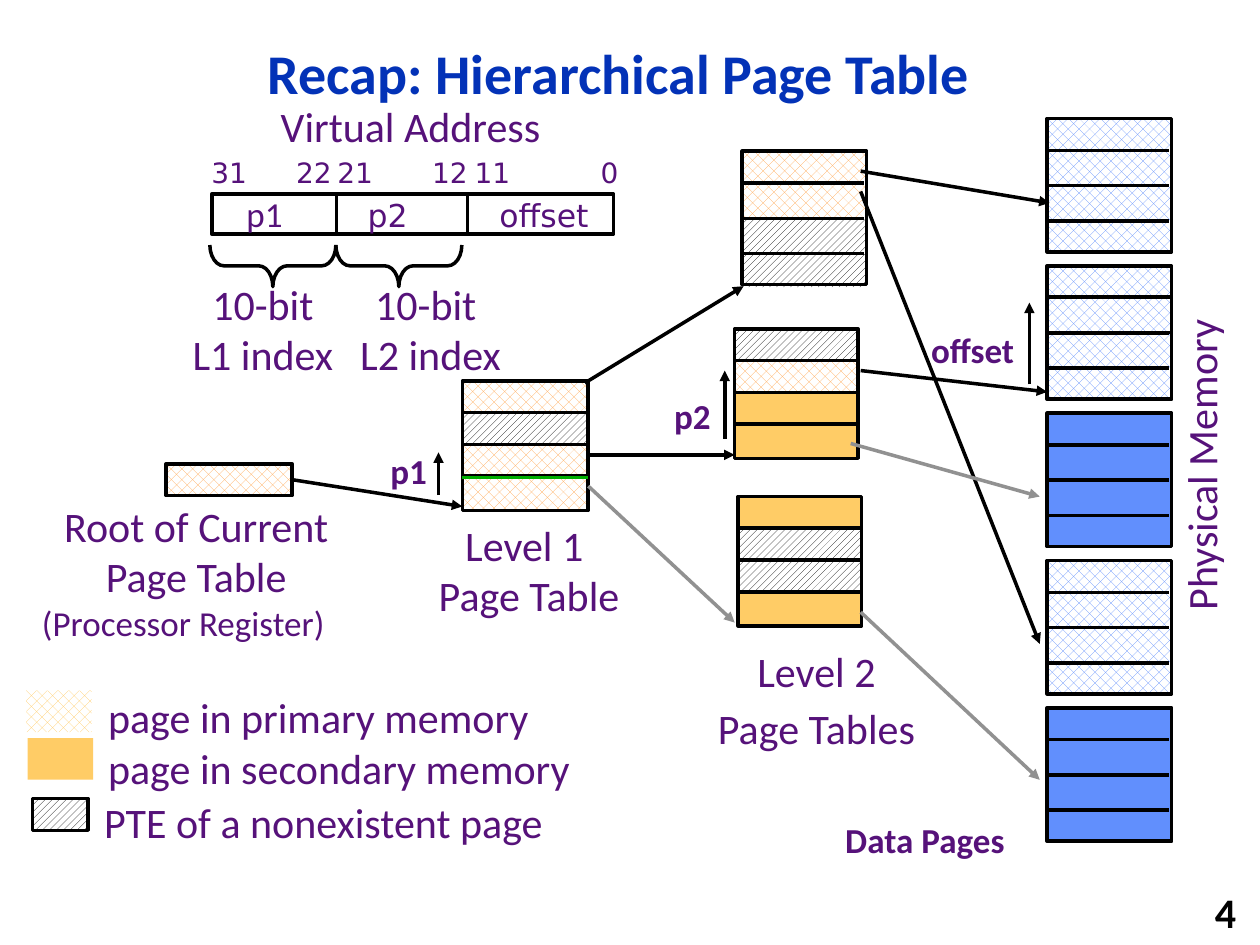
from dataclasses import dataclass

from lxml import etree
from pptx import Presentation
from pptx import util as u
from pptx.dml.color import RGBColor
from pptx.enum import dml, shapes, text
from pptx.oxml import ns

Cm = u.Cm


@dataclass(frozen=True)
class Font:
    name: str
    size: int
    color: str
    bold: bool = False


class Theme:
    black, gray, green, white = "000000", "919191", "00AE00", "FFFFFF"
    ink = "56127A"
    line = 2
    # Solid fills are one colour, patterned fills a pair of pattern and colour
    cross = dml.MSO_PATTERN.from_xml("pct40")
    hatch = dml.MSO_PATTERN.from_xml("wdUpDiag")
    primary = (cross, "FFA74F")
    key = (cross, "FFCC66")
    secondary = "FFCC66"
    absent = (hatch, black)
    data = (cross, "618FFD")
    swapped = "618FFD"
    title = Font("Calibri", 32, "0332B7", True)
    number = Font("Calibri", 24, black, True)
    body = Font("Calibri", 24, ink)
    small = Font("Calibri", 20, ink)
    strong = Font("Calibri", 20, ink, True)
    spacer = Font("Calibri", 28, green, True)
    field = Font("DejaVu Sans", 18, ink)
    bit = Font("DejaVu Sans", 16, ink)


T = Theme
LEFT, CENTER, RIGHT = text.PP_ALIGN.LEFT, text.PP_ALIGN.CENTER, text.PP_ALIGN.RIGHT
PAGE_W, PAGE_H = 2.51, 2.69
PAGE_RULES = (0.64, 1.35, 2.06)
ROW_STEP, ROW_H = 0.64, 0.69


def rgb(color):
    return RGBColor.from_string(color)


def add_box(s, box, fill=None, line=T.black, kind=shapes.MSO_SHAPE.RECTANGLE):
    sp = s.shapes.add_shape(kind, *map(Cm, box))
    sp.shadow.inherit = False
    if fill is None:
        sp.fill.background()
    elif isinstance(fill, tuple):
        sp.fill.patterned()
        sp.fill.pattern, color = fill
        sp.fill.fore_color.rgb = rgb(color)
        sp.fill.back_color.rgb = rgb(T.white)
    else:
        sp.fill.solid()
        sp.fill.fore_color.rgb = rgb(fill)
    if line:
        sp.line.color.rgb = rgb(line)
        sp.line.width = u.Pt(T.line)
    else:
        sp.line.fill.background()
    return sp


def add_line(s, ends, color=T.black, arrow=False):
    c = s.shapes.add_connector(shapes.MSO_CONNECTOR.STRAIGHT, *map(Cm, ends))
    c.line.color.rgb = rgb(color)
    c.line.width = u.Pt(T.line)
    spPr = c._element.spPr
    if arrow:
        etree.SubElement(spPr.find(ns.qn("a:ln")), ns.qn("a:tailEnd"), type="triangle")
    etree.SubElement(spPr, ns.qn("a:effectLst"))
    return c


def add_label(s, box, lines, font, align=LEFT, wrap=False, middle=False):
    """Each line is a string, or a list of (text, font) runs."""
    sp = s.shapes.add_textbox(*map(Cm, box))
    tf = sp.text_frame
    tf.word_wrap = wrap
    tf.auto_size = text.MSO_AUTO_SIZE.NONE if wrap else text.MSO_AUTO_SIZE.SHAPE_TO_FIT_TEXT
    if middle:
        tf.vertical_anchor = text.MSO_ANCHOR.MIDDLE
    for i, line in enumerate(lines):
        p = tf.add_paragraph() if i else tf.paragraphs[0]
        p.alignment = align
        for words, f in [(line, font)] if isinstance(line, str) else line:
            r = p.add_run()
            r.text = words
            r.font.name, r.font.size, r.font.bold = f.name, u.Pt(f.size), f.bold
            r.font.color.rgb = rgb(f.color)
    return sp


def add_page(s, x, y, fill=None):
    add_box(s, (x, y, PAGE_W, PAGE_H), fill)
    for dy in PAGE_RULES:
        add_line(s, (x, y + dy, x + PAGE_W - 0.05, y + dy))


def add_table_rows(s, x, y, w, fills):
    for i, fill in enumerate(fills):
        add_box(s, (x, y + i * ROW_STEP, w, ROW_H), fill)


def draw_address(s):
    add_label(s, (5.41, 1.9, 5.82, 1.27), ["Virtual Address"], T.body)
    add_box(s, (4.27, 3.91, 8.1, 0.81), T.white)
    for x in (6.78, 9.42):
        add_line(s, (x, 3.94, x, 4.72))
    fields = [("p1", T.small), ("\tp2\toffset", T.field)]
    sp = add_label(s, (4.72, 3.76, 7.57, 1.09), [fields], T.field)
    tabs = etree.SubElement(sp.text_frame.paragraphs[0]._p.get_or_add_pPr(), ns.qn("a:tabLst"))
    for pos in (2.44, 5.1):
        etree.SubElement(tabs, ns.qn("a:tab"), pos=str(Cm(pos)), algn="l")
    for x, bit in ((4.01, "31"), (5.72, "22"), (6.55, "21"), (8.46, "12"), (9.32, "11"), (11.86, "0")):
        add_label(s, (x, 3.02, 1.27, 0.94), [bit], T.bit, wrap=True)
    # Index widths under their braces
    for brace_x, x, lines in ((5.08, 3.61, ("10-bit", "L1 index")),
                              (7.62, 6.99, ("10-bit ", "L2 index"))):
        sp = add_box(s, (brace_x, 4.09, 0.84, 2.54), kind=shapes.MSO_SHAPE.RIGHT_BRACE)
        sp.rotation = 90
        sp.adjustments[0] = 0.34
        add_label(s, (x, 5.49, 3.38, 2.31), lines, T.body, CENTER)


def draw_tables(s):
    # Root register
    root = add_box(s, (3.35, 9.35, 2.54, 0.64), T.primary)
    add_label(s, (0.08, 9.96, 7.75, 2.31), ["Root of Current", "Page Table"], T.body, CENTER, wrap=True)
    add_label(s, (0.2, 12.01, 6.99, 1.09), ["(Processor Register)"], T.small, CENTER, wrap=True)
    # Level 1
    add_table_rows(s, 9.32, 7.68, 2.54, (T.primary, T.absent, T.primary, T.primary))
    add_line(s, (9.32, 9.63, 11.86, 9.63), T.green)
    add_label(s, (8.53, 10.34, 4.27, 2.31), ["Level 1 ", "Page Table"], T.body, CENTER)
    # Level 2
    for y, fill in ((3.02, T.primary), (4.39, T.absent)):
        add_box(s, (14.96, y, PAGE_W, 1.4), fill, line=None)
    add_page(s, 14.96, 3.05)
    add_table_rows(s, 14.81, 6.63, 2.49, (T.absent, T.primary, T.secondary, T.secondary))
    add_table_rows(s, 14.88, 10.01, 2.49, (T.secondary, T.absent, T.absent, T.secondary))
    add_label(s, (14.15, 12.88, 4.62, 2.46),
              ["Level 2", [("Page Tables", T.body), (" ", T.spacer)]], T.body, CENTER)
    return root


def draw_memory(s):
    for i, fill in enumerate((T.data, T.data, T.swapped, T.data, T.swapped)):
        add_page(s, 21.11, 2.39 + i * 2.97, fill)
    add_box(s, (21.11, 5.99, PAGE_W, 0.71), T.data)
    add_label(s, (16.79, 16.38, 3.78, 1.09), ["Data Pages"], T.strong)
    sp = add_label(s, (20.98, 8.74, 6.45, 1.27), ["Physical Memory"], T.body, CENTER, wrap=True)
    sp.rotation = 270


def draw_arrows(s, root):
    add_line(s, (5.89, 9.67, 9.32, 10.21), arrow=True).begin_connect(root, 3)
    for color, ends in (
        (T.black, (11.79, 7.72, 14.99, 5.77)),
        (T.black, (11.86, 9.17, 14.81, 9.17)),
        (T.gray, (11.86, 9.8, 14.81, 12.55)),
        (T.black, (17.35, 3.45, 21.16, 4.09)),
        (T.black, (17.35, 3.86, 20.96, 12.98)),
        (T.black, (17.35, 7.47, 21.11, 7.9)),
        (T.gray, (17.15, 8.94, 20.96, 10.01)),
        (T.gray, (17.35, 12.34, 20.96, 15.72)),
    ):
        add_line(s, ends, color, arrow=True)
    # Index arrows with their names
    for x, bottom, top, name, box in (
        (8.84, 9.98, 9.12, "p1", (7.62, 8.94, 1.24, 1.09)),
        (14.61, 8.84, 7.47, "p2", (13.34, 7.82, 1.24, 1.09)),
        (20.75, 7.75, 6.1, "offset", (18.52, 6.5, 2.21, 1.09)),
    ):
        add_line(s, (x, bottom, x, top), arrow=True)
        add_label(s, box, [name], T.strong)


def draw_legend(s):
    add_box(s, (0.53, 13.92, 1.32, 0.84), T.key, line=None)
    add_box(s, (0.56, 14.88, 1.32, 0.84), T.secondary, line=None)
    add_box(s, (0.66, 16.1, 1.12, 0.64), T.absent)
    add_label(s, (1.93, 13.82, 9.91, 2.31), ["page in primary memory", "page in secondary memory"], T.body)
    add_label(s, (1.85, 15.93, 9.5, 1.27), ["PTE of a nonexistent page"], T.body)


def main():
    prs = Presentation()
    prs.slide_width, prs.slide_height = Cm(25.4), Cm(19.05)
    s = prs.slides.add_slide(prs.slide_layouts[6])
    add_label(s, (2.34, 0.43, 20.27, 2.06), ["Recap: Hierarchical Page Table"],
              T.title, CENTER, wrap=True, middle=True)
    add_label(s, (19.89, 17.98, 5.28, 0.81), ["4"], T.number, RIGHT, wrap=True, middle=True)
    draw_address(s)
    draw_memory(s)
    root = draw_tables(s)
    draw_arrows(s, root)
    draw_legend(s)
    prs.save("out.pptx")


if __name__ == "__main__":
    main()
